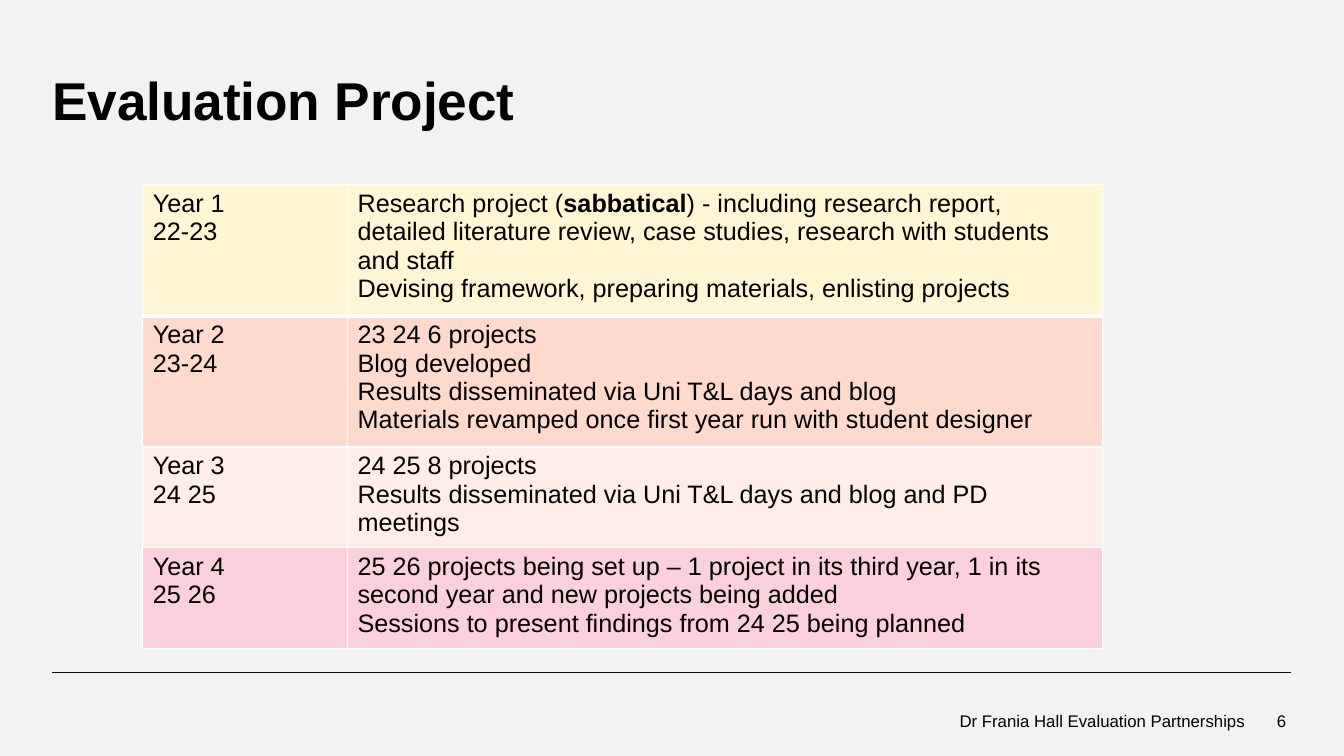
from dataclasses import dataclass

from lxml import etree
from pptx import Presentation, util as u
from pptx.dml.color import RGBColor
from pptx.enum import shapes, text
from pptx.oxml import ns

PX = 9525  # EMU per px, 1280 x 720 px slide


@dataclass(frozen=True)
class Theme:
    font: str = "Arial"
    ink: str = "000000"
    rule: str = "0D0D0D"
    background: str = "F2F2F2"
    border: str = "FFFFFF"
    title: int = 38
    body: int = 18
    footer: int = 12


# Each row: fill, height, cell texts; ** switches bold on and off
YEARS = [
    ("FFF6D3", 117, "Year 1\n22-23",
     "Research project (**sabbatical**) - including research report, detailed "
     "literature review, case studies, research with students and staff\n"
     "Devising framework, preparing materials, enlisting projects"),
    ("FFD9CC", 117, "Year 2\n23-24",
     "23 24 6 projects\nBlog developed\n"
     "Results disseminated via Uni T&L days and blog\n"
     "Materials revamped once first year run with student designer"),
    ("FFEDE7", 90, "Year 3\n24 25",
     "24 25 8 projects\n"
     "Results disseminated via Uni T&L days and blog and PD meetings"),
    ("FBD0DD", 90, "Year 4\n25 26",
     "25 26 projects being set up – 1 project in its third year, 1 in its "
     "second year and new projects being added\n"
     "Sessions to present findings from 24 25 being planned"),
]


def rgb(color):
    return RGBColor.from_string(color)


def write(tf, content, *, size, color, font, bold=False, align=None,
          line_spacing=None, tracking=None):
    """Fill a text frame, one paragraph per line."""
    for i, line in enumerate(content.split("\n")):
        p = tf.add_paragraph() if i else tf.paragraphs[0]
        p.alignment = align
        p.line_spacing = line_spacing
        for j, part in enumerate(line.split("**")):
            r = p.add_run()
            r.text = part
            r.font.name, r.font.size = font, u.Pt(size)
            r.font.bold = bold or j % 2 == 1
            r.font.color.rgb = rgb(color)
            if tracking is not None:
                r._r.get_or_add_rPr().set("spc", str(tracking))


def add_border(cell, side, color, points):
    ln = etree.SubElement(cell._tc.get_or_add_tcPr(), ns.qn(f"a:ln{side}"),
                          w=str(u.Pt(points)))
    fill = etree.SubElement(ln, ns.qn("a:solidFill"))
    etree.SubElement(fill, ns.qn("a:srgbClr"), val=color)


class Builder:
    def __init__(self, prs, theme):
        self.theme = theme
        self.s = prs.slides.add_slide(prs.slide_layouts[6])
        self.s.background.fill.solid()
        self.s.background.fill.fore_color.rgb = rgb(theme.background)

    def text(self, content, x, y, w, h, anchor, **style):
        sp = self.s.shapes.add_textbox(*(v * PX for v in (x, y, w, h)))
        tf = sp.text_frame
        tf.word_wrap = True
        tf.vertical_anchor = anchor
        tf.margin_left = tf.margin_right = tf.margin_top = tf.margin_bottom = 0
        write(tf, content, color=self.theme.ink, font=self.theme.font, **style)

    def line(self, x1, y1, x2, y2, points):
        sp = self.s.shapes.add_connector(
            shapes.MSO_CONNECTOR.STRAIGHT, *(v * PX for v in (x1, y1, x2, y2)))
        sp.line.color.rgb = rgb(self.theme.rule)
        sp.line.width = u.Pt(points)
        etree.SubElement(sp._element.spPr, ns.qn("a:effectLst"))

    def table(self, rows, x, y, widths):
        height = sum(row[1] for row in rows)
        frame = self.s.shapes.add_table(
            len(rows), len(widths), x * PX, y * PX, sum(widths) * PX, height * PX)
        table = frame.table
        table.first_row = table.horz_banding = False
        for column, width in zip(table.columns, widths):
            column.width = width * PX
        for i, (fill, row_height, *contents) in enumerate(rows):
            table.rows[i].height = row_height * PX
            for j, content in enumerate(contents):
                cell = table.cell(i, j)
                # The edge under the first row is heavier
                edges = {"L": 1, "R": 1, "T": 3 if i == 1 else 1,
                         "B": 3 if i == 0 else 1}
                for side, points in edges.items():
                    add_border(cell, side, self.theme.border, points)
                cell.fill.solid()
                cell.fill.fore_color.rgb = rgb(fill)
                write(cell.text_frame, content, size=self.theme.body,
                      color=self.theme.ink, font=self.theme.font)


def main():
    prs = Presentation()
    prs.slide_width, prs.slide_height = 1280 * PX, 720 * PX
    theme = Theme()
    b = Builder(prs, theme)

    # Title
    b.text("Evaluation Project", 50, 50, 1180, 76, text.MSO_ANCHOR.BOTTOM,
           size=theme.title, bold=True, line_spacing=0.9, tracking=-10)

    # Project years
    b.table(YEARS, 136, 176, [195, 719])

    # Footer
    b.line(50, 640, 1230, 640, 0.25)
    for content, x, w in [("Dr Frania Hall Evaluation Partnerships", 349, 837),
                          ("6", 1187, 38)]:
        b.text(content, x, 667, w, 38, text.MSO_ANCHOR.MIDDLE,
               size=theme.footer, align=text.PP_ALIGN.RIGHT)

    prs.save("out.pptx")


if __name__ == "__main__":
    main()
